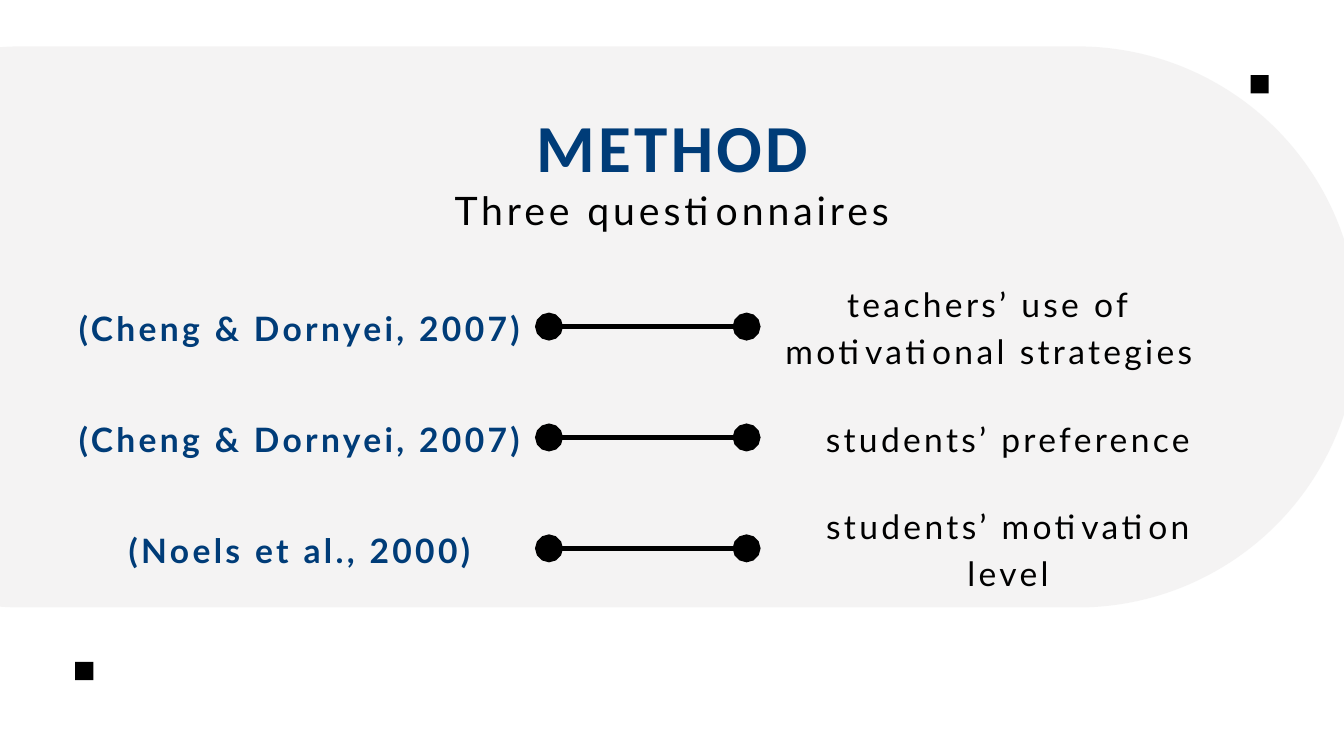
from lxml import etree
from pptx import Presentation
from pptx.dml.color import RGBColor
from pptx.enum import shapes, text
from pptx.oxml import ns
from pptx.util import Inches, Pt

NAVY = RGBColor(0x00, 0x3C, 0x78)
BLACK = RGBColor(0x00, 0x00, 0x00)
PALE_GREY = RGBColor(0xF2, 0xF1, 0xF1)

TITLE = {"name": "Calibri", "size": Pt(72), "bold": True}
SUBTITLE = {"name": "Lato", "size": Pt(42), "bold": False}
REFERENCE = {"name": "Lato", "size": Pt(36), "bold": True}
TOPIC = {"name": "Lato", "size": Pt(36), "bold": False}

ROW_PITCH = 1.65
LINE_HEIGHT = 0.7
# Reference, topic lines, number of drawn lines, left edge of the topic
QUESTIONNAIRES = [
    ("(Cheng & Dornyei, 2007)", ["teachers’ use of motivational strategies"], 2, 10.65),
    ("(Cheng & Dornyei, 2007)", ["students’ preference"], 1, 10.93),
    ("(Noels et al., 2000)", ["students’ motivation", "level"], 2, 10.93),
]


def add_child(parent, tag, **attributes):
    return etree.SubElement(parent, ns.qn(tag), attributes)


def add_filled_shape(slide, kind, box, color):
    shape = slide.shapes.add_shape(kind, *map(Inches, box))
    shape.shadow.inherit = False
    shape.fill.solid()
    shape.fill.fore_color.rgb = color
    shape.line.fill.background()
    return shape


def add_text(slide, box, lines, font_format, color, line_spacing, tracking):
    """Add centred text; line spacing and letter tracking are in points."""
    frame = slide.shapes.add_textbox(*map(Inches, box)).text_frame
    frame.word_wrap = True
    for side in ("left", "top", "right", "bottom"):
        setattr(frame, f"margin_{side}", 0)
    for index, line in enumerate(lines):
        paragraph = frame.add_paragraph() if index else frame.paragraphs[0]
        paragraph.alignment = text.PP_ALIGN.CENTER
        paragraph.line_spacing = Pt(line_spacing)
        run = paragraph.add_run()
        run.text = line
        for name, value in font_format.items():
            setattr(run.font, name, value)
        run.font.color.rgb = color
        run._r.get_or_add_rPr().set("spc", str(round(tracking * 100)))


def add_dumbbell(slide, left, right, y):
    """Add a horizontal line with a large dot at each end."""
    connector = slide.shapes.add_connector(
        shapes.MSO_CONNECTOR.STRAIGHT, Inches(left), Inches(y), Inches(right), Inches(y))
    connector.line.color.rgb = BLACK
    connector.line.width = Pt(6)
    outline = connector.line._get_or_add_ln()
    for tag in ("a:headEnd", "a:tailEnd"):
        add_child(outline, tag, type="oval", w="lg", len="lg")
    add_child(connector._element.spPr, "a:effectLst")


def add_backdrop(slide, left, top, width, height):
    pill = add_filled_shape(slide, shapes.MSO_SHAPE.ROUNDED_RECTANGLE,
                            (left, top, width, height), PALE_GREY)
    pill.adjustments[0] = 0.5
    color = pill._element.spPr.find(f".//{ns.qn('a:srgbClr')}")
    add_child(color, "a:alpha", val="80000")


def add_corner_squares(slide, left, top, width, height, side=0.27):
    """Mark the bottom left and top right corners of the box."""
    for x, y in ((left, top + height - side), (left + width - side, top)):
        add_filled_shape(slide, shapes.MSO_SHAPE.RECTANGLE, (x, y, side, side), BLACK)


def add_heading(slide, left, top, width):
    add_text(slide, (left, top, width, 1.39), ["METHOD"], TITLE, NAVY, 100.8, 3.6)
    add_text(slide, (left, top + 1.3, width, 0.79), ["Three questionnaires"],
             SUBTITLE, BLACK, 58.8, 4.2)


def add_questionnaires(slide, left, top):
    """Add one row per questionnaire: reference, dumbbell, topic."""
    for index, (reference, topic, line_count, topic_left) in enumerate(QUESTIONNAIRES):
        middle = top + LINE_HEIGHT + index * ROW_PITCH
        add_text(slide, (left, middle - LINE_HEIGHT / 2, 8, LINE_HEIGHT),
                 [reference], REFERENCE, NAVY, 50.4, 3.6)
        height = line_count * LINE_HEIGHT
        add_text(slide, (left + topic_left, middle - height / 2, 7.22, height),
                 topic, TOPIC, BLACK, 50.4, 3.6)
        add_dumbbell(slide, left + 7.71, left + 10.65, middle + 0.03)


def main():
    presentation = Presentation()
    presentation.slide_width = Inches(20)
    presentation.slide_height = Inches(11.25)
    slide = presentation.slides.add_slide(presentation.slide_layouts[6])
    add_backdrop(slide, -3.85, 0.69, 24.06, 8.35)
    add_heading(slide, 1.51, 1.36, 16.98)
    add_corner_squares(slide, 1.12, 1.12, 17.76, 9)
    add_questionnaires(slide, 0.46, 4.13)
    presentation.save("out.pptx")


if __name__ == "__main__":
    main()
